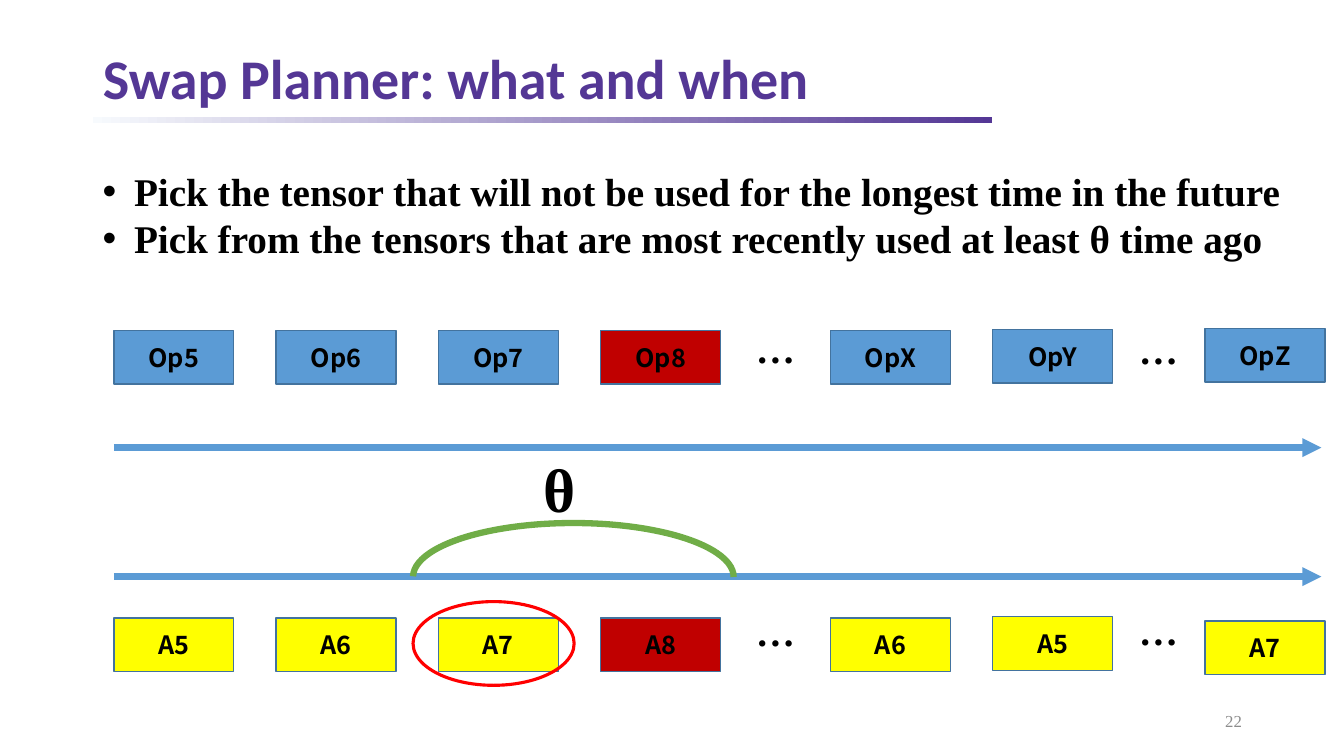
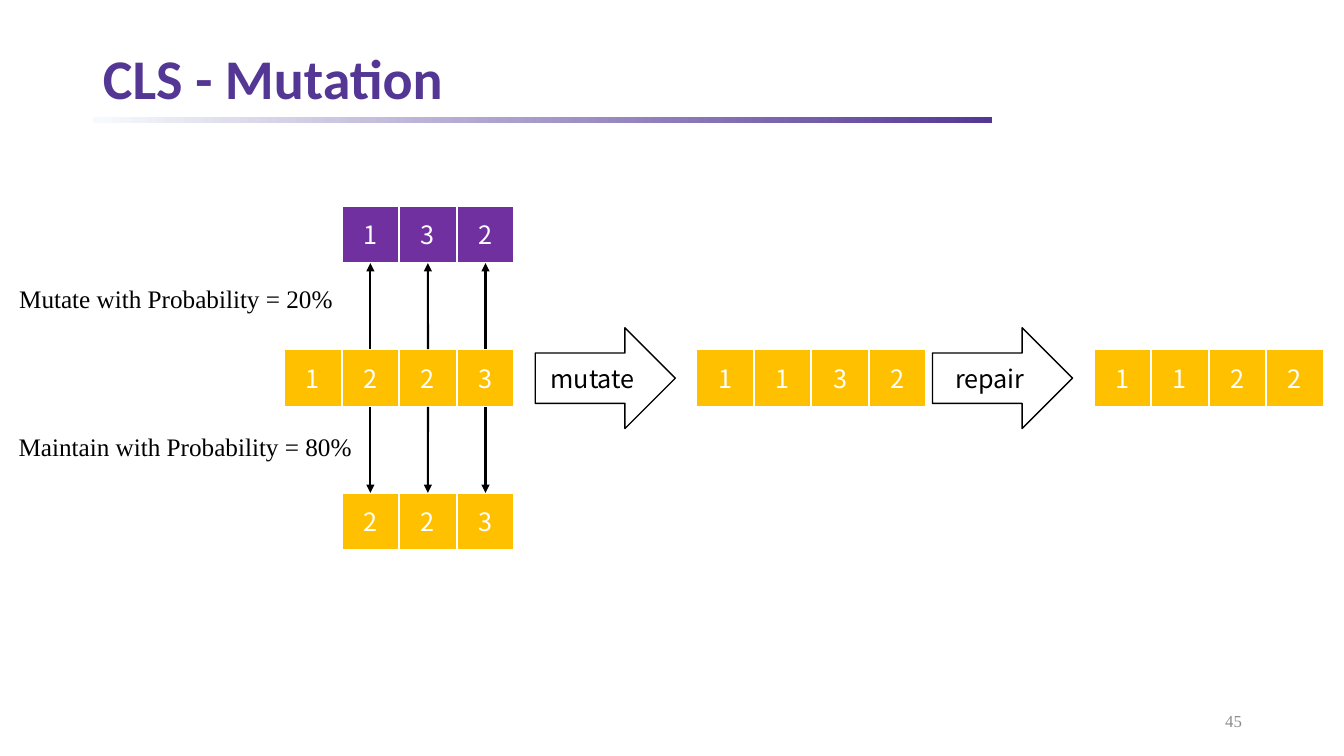
from lxml.etree import SubElement
from pptx import Presentation
from pptx.dml.color import RGBColor
from pptx.enum.shapes import MSO_CONNECTOR, MSO_SHAPE
from pptx.enum.text import MSO_ANCHOR, PP_ALIGN
from pptx.oxml.ns import qn
from pptx.util import Cm, Pt

HUES = {
    "title": "543795", "pale": "F7FAFD", "gray": "8C8C8C",
    "black": "000000", "white": "FFFFFF", "blue": "5B9BD5",
    "edge": "43739E", "dark": "C00000", "yellow": "FFFF00",
    "red": "FF0000", "green": "70AD47", "gold": "FFC000",
    "plum": "7030A0",
}
SERIF, SANS, HEAD = "Times New Roman", "Noto Sans CJK SC", "Calibri"
CELL = 1.45


def hue(name):
    """Return the named colour."""
    return RGBColor.from_string(HUES[name])


def place(x, y, w, h):
    """Turn centimetres into lengths."""
    return [Cm(v) for v in (x, y, w, h)]


def style(frame, size, face, color="black", bold=False, align=PP_ALIGN.LEFT):
    """Format every paragraph and run of a text frame."""
    for para in frame.paragraphs:
        para.alignment = align
        for run in para.runs:
            font = run.font
            font.size, font.name, font.bold = Pt(size), face, bold
            font.color.rgb = hue(color)


def label(slide, text, box, size, wrap=False, **look):
    """Add a text box in the serif face."""
    frame = slide.shapes.add_textbox(*place(*box)).text_frame
    frame.text = text
    frame.word_wrap = wrap
    style(frame, size, SERIF, **look)
    return frame


def shape(slide, kind, box, fill=None, edge=None, width=1):
    """Add a preset shape without shadow."""
    item = slide.shapes.add_shape(kind, *place(*box))
    item.shadow.inherit = False
    if fill:
        item.fill.solid()
        item.fill.fore_color.rgb = hue(fill)
    else:
        item.fill.background()
    if edge:
        item.line.color.rgb = hue(edge)
        item.line.width = Pt(width)
    else:
        item.line.fill.background()
    return item


def block(slide, text, box, fill, edge, width=1, color="black", bold=False,
          kind=MSO_SHAPE.RECTANGLE):
    """Add a filled shape with a centred caption."""
    item = shape(slide, kind, box, fill, edge, width)
    frame = item.text_frame
    frame.text = text
    frame.vertical_anchor = MSO_ANCHOR.MIDDLE
    style(frame, 18, SANS, color, bold, PP_ALIGN.CENTER)
    return item


def arrow(slide, start, end, color, width):
    """Add a straight line with an arrowhead at its end."""
    ends = [Cm(v) for v in (*start, *end)]
    line = slide.shapes.add_connector(MSO_CONNECTOR.STRAIGHT, *ends)
    line.line.color.rgb = hue(color)
    line.line.width = Pt(width)
    props = line.element.spPr
    SubElement(props.find(qn("a:ln")), qn("a:tailEnd"), type="triangle")
    SubElement(props, qn("a:effectLst"))
    return line


def link(slide, start, begin, end, stop):
    """Join the sides of two blocks with an arrow."""
    line = arrow(slide, (0, 0), (1, 1), "black", 1.5)
    line.begin_connect(start, begin)
    line.end_connect(end, stop)


def bullets(slide, lines, box):
    """Add a bold bulleted list."""
    frame = label(slide, "\n".join(lines), box, 28, bold=True)
    for para in frame.paragraphs:
        props = para._p.get_or_add_pPr()
        props.set("marL", str(Cm(0.79)))
        props.set("indent", str(-Cm(0.79)))
        SubElement(props, qn("a:buFont"), typeface="Arial")
        SubElement(props, qn("a:buChar"), char="•")


def page(deck, text, number):
    """Add a slide with title, gradient band and page number."""
    slide = deck.slides.add_slide(deck.slide_layouts[5])
    band = shape(slide, MSO_SHAPE.RECTANGLE, (2.34, 2.95, 22.66, 0.14))
    band.fill.gradient()
    band.fill.gradient_angle = 0
    for stop, name in zip(band.fill.gradient_stops, ("pale", "title")):
        stop.color.rgb = hue(name)
    title = slide.shapes.title
    title.left, title.top, title.width, title.height = place(
        2.34, 1.09, 29.21, 1.91)
    frame = title.text_frame
    frame.text = text
    frame.vertical_anchor = MSO_ANCHOR.MIDDLE
    frame.paragraphs[0].line_spacing = 0.9
    style(frame, 40, HEAD, "title", True)
    foot = label(slide, number, (23.93, 17.65, 7.62, 1.02), 12, True,
                 color="gray", align=PP_ALIGN.RIGHT)
    foot.vertical_anchor = MSO_ANCHOR.MIDDLE
    return slide


def track(slide, names, top, shifts, fill):
    """Add a row of seven blocks whose fourth is marked."""
    lefts = [2.87 + 4.09 * i for i in range(4)] + [20.93, 25.02, 30.37]
    for i, (name, x) in enumerate(zip(names, lefts)):
        y = top + shifts.get(i, 0)
        block(slide, name, (x, y, 3.02, 1.35), "dark" if i == 3 else fill,
              "edge", bold=True)


def cells(slide, digits, x, y, fill="gold"):
    """Add a row of adjoining square cells and return them."""
    return [block(slide, digit, (x + CELL * i, y, CELL, CELL), fill,
                  "white", 1.5, "white")
            for i, digit in enumerate(digits)]


def planner(deck):
    """Build the swap planner slide."""
    slide = page(deck, "Swap Planner: what and when", "22")
    bullets(slide, (
        "Pick the tensor that will not be used for the longest time in the future",
        "Pick from the tensors that are most recently used at least θ time ago",
    ), (2.34, 4.09, 30.53, 2.64))
    for y in (11.28, 14.53):
        arrow(slide, (2.87, y), (33.3, y), "blue", 4.5)
    ops = ("Op5", "Op6", "Op7", "Op8", "OpX", "OpY", "OpZ")
    track(slide, ops, 8.33, {5: -0.03, 6: -0.05}, "blue")
    uses = ("A5", "A6", "A7", "A8", "A6", "A5", "A7")
    track(slide, uses, 15.57, {5: -0.03, 6: 0.08}, "yellow")
    shape(slide, MSO_SHAPE.OVAL, (10.41, 15.16, 4.06, 2.11),
          edge="red", width=2.25)
    arc = shape(slide, MSO_SHAPE.ARC, (10.41, 13.18, 8.08, 2.72),
                edge="green", width=4.5)
    arc.adjustments[0], arc.adjustments[1] = 108.15, 0
    label(slide, "θ", (13.46, 11.25, 1.22, 2.13), 44, True, bold=True)
    for x, y in ((18.8, 8.05), (18.8, 15.19), (28.45, 15.16), (28.45, 8.08)):
        label(slide, "…", (x, y, 1.5, 1.45), 28, bold=True)


def mutation(deck):
    """Build the mutation slide."""
    slide = page(deck, "CLS - Mutation", "45")
    left, mid, gap = 7.16, 8.8, 3.62
    base = cells(slide, "1223", left, mid)
    above = cells(slide, "132", left + CELL, mid - gap, "plum")
    below = cells(slide, "223", left + CELL, mid + gap)
    for cell, high, low in zip(base[1:], above, below):
        link(slide, cell, 0, high, 2)
        link(slide, cell, 2, low, 0)
    for text, y, w in (("Mutate with Probability = 20%", 7.01, 8.51),
                       ("Maintain with Probability = 80%", 10.74, 8.99)):
        label(slide, text, (0.13, y, w, 1.02), 18, align=PP_ALIGN.RIGHT)
    for i, (verb, digits) in enumerate((("mutate", "1132"),
                                        ("repair", "1122"))):
        x = 13.49 + 10.01 * i
        block(slide, verb, (x, 8.26, 3.53, 2.54), "white", "black",
              kind=MSO_SHAPE.RIGHT_ARROW)
        cells(slide, digits, x + 4.06, mid)


def main():
    """Build and save the deck."""
    deck = Presentation()
    deck.slide_width, deck.slide_height = Cm(33.87), Cm(19.05)
    planner(deck)
    mutation(deck)
    deck.save("out.pptx")


if __name__ == "__main__":
    main()
